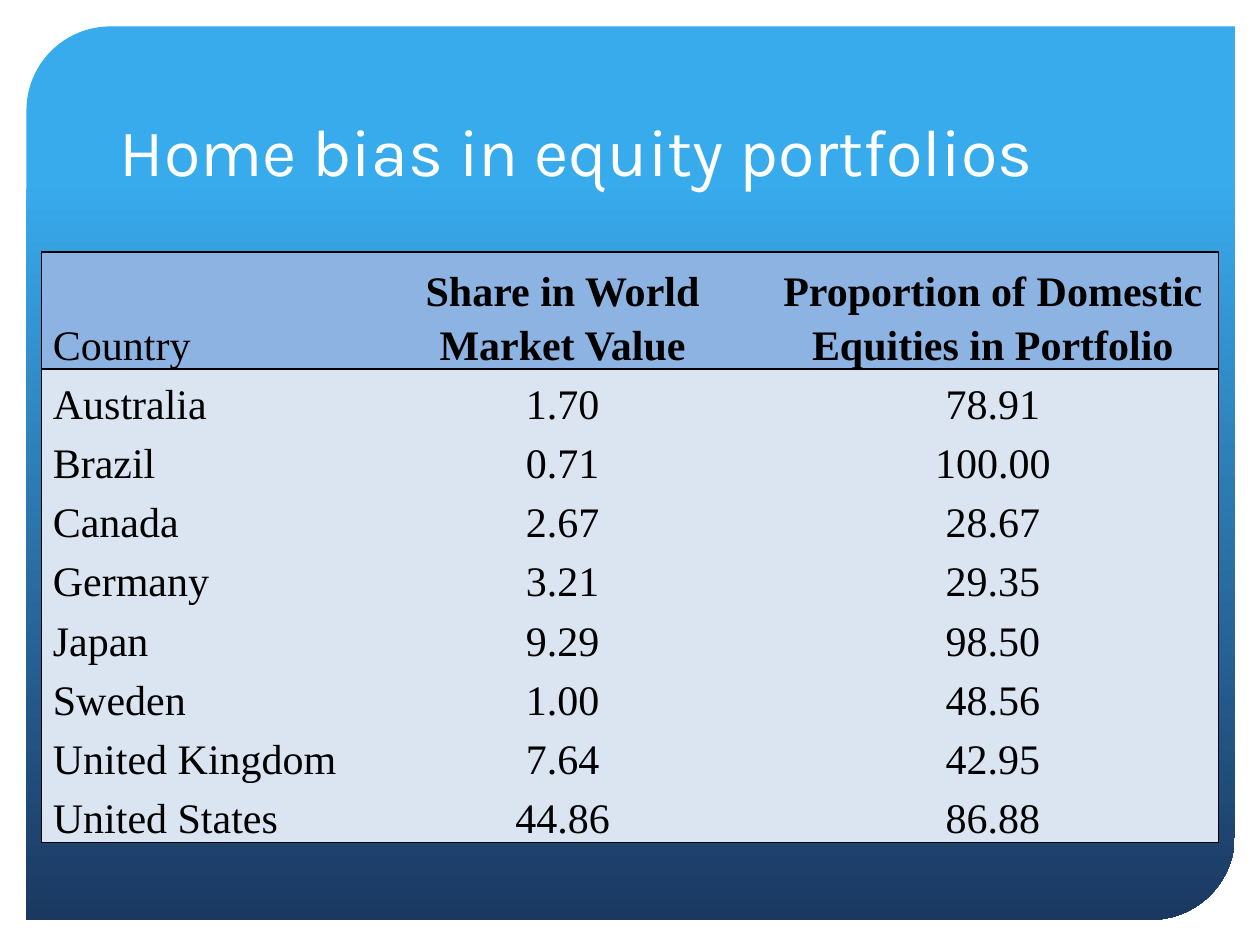
from lxml import etree
from pptx import Presentation
from pptx.dml.color import RGBColor
from pptx.enum.shapes import MSO_SHAPE
from pptx.enum.text import MSO_ANCHOR, MSO_AUTO_SIZE, PP_ALIGN
from pptx.oxml.ns import qn
from pptx.util import Inches, Pt

ROUND_DIAGONAL = MSO_SHAPE.ROUND_2_DIAG_RECTANGLE
BOTTOM = MSO_ANCHOR.BOTTOM
NO_AUTOFIT = MSO_AUTO_SIZE.NONE
LEFT, CENTER = PP_ALIGN.LEFT, PP_ALIGN.CENTER

WHITE = RGBColor(0xFF, 0xFF, 0xFF)
BLACK = RGBColor(0, 0, 0)
SKY = RGBColor(0x38, 0xAB, 0xED)
NAVY = RGBColor(0x1B, 0x38, 0x61)
HEADER_BLUE = RGBColor(0x8D, 0xB3, 0xE2)
BODY_BLUE = RGBColor(0xDB, 0xE5, 0xF1)

TITLE_FONT = {"name": "Karla", "size": Pt(38), "bold": False}
CELL_FONT = {"name": "Times New Roman", "size": Pt(24)}

ROWS = [
    ("Country", "Share in World Market Value", "Proportion of Domestic Equities in Portfolio"),
    ("Australia", "1.70", "78.91"),
    ("Brazil", "0.71", "100.00"),
    ("Canada", "2.67", "28.67"),
    ("Germany", "3.21", "29.35"),
    ("Japan", "9.29", "98.50"),
    ("Sweden", "1.00", "48.56"),
    ("United Kingdom", "7.64", "42.95"),
    ("United States", "44.86", "86.88"),
]
COL_WIDTHS = [2.51, 3.25, 3.58]
ROW_HEIGHTS = [0.93] + [0.47] * (len(ROWS) - 1)


def set_font(font, values, color):
    for name, value in values.items():
        setattr(font, name, value)
    font.color.rgb = color


def set_borders(cell, edges):
    tc_pr = cell._tc.get_or_add_tcPr()
    for i, (tag, shown) in enumerate(edges.items()):
        ln = etree.Element(qn(f"a:{tag}"), w=str(Pt(1)))
        tc_pr.insert(i, ln)
        if shown:
            fill = etree.SubElement(ln, qn("a:solidFill"))
            etree.SubElement(fill, qn("a:srgbClr"), val=str(BLACK))
        else:
            etree.SubElement(ln, qn("a:noFill"))


prs = Presentation()
prs.slide_width, prs.slide_height = Inches(10), Inches(7.5)
s = prs.slides.add_slide(prs.slide_layouts[5])
s.background.fill.solid()
s.background.fill.fore_color.rgb = WHITE

panel = s.shapes.add_shape(ROUND_DIAGONAL, Inches(0.21), Inches(0.21), Inches(9.59), Inches(7.09))
panel.adjustments[0] = 0.094
panel.adjustments[1] = 0
panel.shadow.inherit = False
panel.line.fill.background()
panel.fill.gradient()
panel.fill.gradient_angle = 270
for stop, position, color in zip(panel.fill.gradient_stops, (0.17, 1), (SKY, NAVY)):
    stop.position = position
    stop.color.rgb = color

title = s.shapes.title
title.element.addprevious(panel.element)
title.left, title.top = Inches(0.85), Inches(0.42)
title.width, title.height = Inches(8.29), Inches(1.14)
tf = title.text_frame
tf.text = "Home bias in equity portfolios"
tf.auto_size = NO_AUTOFIT
tf.vertical_anchor = BOTTOM
p = tf.paragraphs[0]
p.alignment = LEFT
set_font(p.runs[0].font, TITLE_FONT, WHITE)

frame = s.shapes.add_table(
    len(ROWS), len(COL_WIDTHS), Inches(0.33), Inches(2),
    Inches(sum(COL_WIDTHS)), Inches(sum(ROW_HEIGHTS)),
)
table = frame.table
table.horz_banding = False
for column, width in zip(table.columns, COL_WIDTHS):
    column.width = Inches(width)

for r, values in enumerate(ROWS):
    table.rows[r].height = Inches(ROW_HEIGHTS[r])
    header, last_row = r == 0, r == len(ROWS) - 1
    for c, value in enumerate(values):
        first_col, last_col = c == 0, c == len(values) - 1
        cell = table.cell(r, c)
        cell.text = value
        cell.vertical_anchor = BOTTOM
        cell.margin_left = Inches(0.09 if first_col else 0.01)
        cell.margin_top = cell.margin_right = Inches(0.01)
        cell.margin_bottom = 0
        cell.fill.solid()
        cell.fill.fore_color.rgb = HEADER_BLUE if header else BODY_BLUE
        set_borders(cell, {
            "lnL": first_col,
            "lnR": last_col,
            "lnT": r <= 1,
            "lnB": header or last_row,
        })
        p = cell.text_frame.paragraphs[0]
        p.alignment = LEFT if first_col else CENTER
        if header or not first_col:
            p.line_spacing = 1.15
            p.space_after = Pt(10)
        font = p.runs[0].font
        set_font(font, CELL_FONT, BLACK)
        font.bold = header and not first_col

prs.save("out.pptx")
